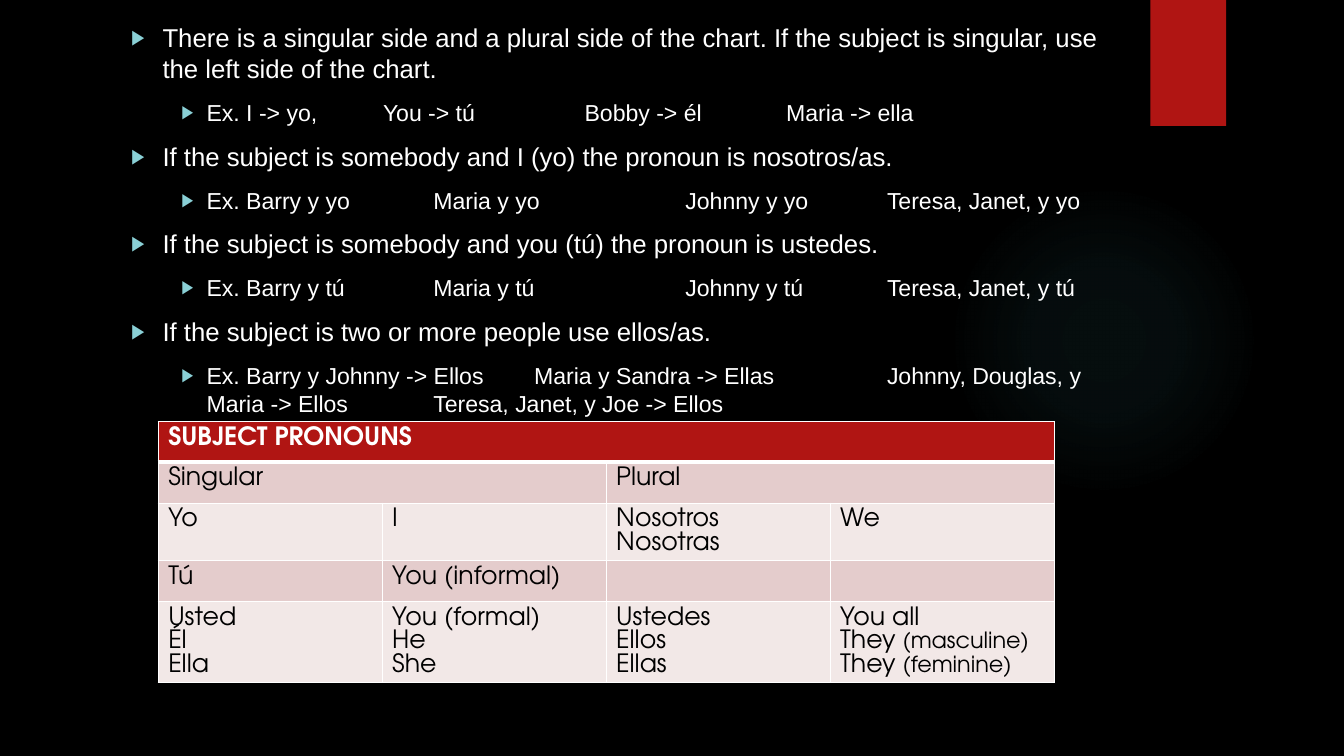
"""Build the slide on choosing Spanish subject pronouns."""
from dataclasses import dataclass

from lxml import etree
from pptx import Presentation
from pptx.dml.color import RGBColor
from pptx.enum import shapes, text
from pptx.oxml import parse_xml
from pptx.oxml import ns
from pptx.util import Pt

RULES = [
    ("There is a singular side and a plural side of the chart. If the subject is singular, "
     "use the left side of the chart.",
     "Ex. I -> yo,\t\tYou -> tú\t\t\tBobby -> él  \t\tMaria -> ella"),
    ("If the subject is somebody and I (yo) the pronoun is nosotros/as.",
     "Ex. Barry y yo\t\tMaria y yo\t\t\tJohnny y yo\t\tTeresa, Janet, y yo"),
    ("If the subject is somebody and you (tú) the pronoun is ustedes.",
     "Ex. Barry y tú \t\tMaria y tú \t\t\tJohnny y tú \t\tTeresa, Janet, y tú"),
    ("If the subject is two or more people use ellos/as.",
     "Ex. Barry y Johnny -> Ellos\t\tMaria y Sandra -> Ellas\t\t\tJohnny, Douglas, y "
     "Maria -> Ellos\t\tTeresa, Janet, y Joe -> Ellos"),
]
PRONOUNS = [
    [["SUBJECT PRONOUNS"], [], [], []],
    [["Singular"], [], ["Plural"], []],
    [["Yo"], ["I"], ["Nosotros", "Nosotras"], ["We"]],
    [["Tú"], ["You (informal)"], [], []],
    [["Usted", "Él", "Ella"], ["You (formal)", "He", "She"], ["Ustedes", "Ellos", "Ellas"],
     ["You all", ("They ", "(masculine)"), ("They ", "(feminine)")]],
]
MERGES = [((0, 0), (0, 3)), ((1, 0), (1, 1)), ((1, 2), (1, 3))]
ROW_HEIGHTS = [29.2, 29.2, 41, 29.2, 58]
COLUMN_WIDTH = 160


@dataclass(frozen=True)
class Theme:
    """Colours, fonts and type sizes."""
    back: str = "000000"
    white: str = "FFFFFF"
    red: str = "B01513"
    glow: str = "50B9C1"
    bullet: str = "8AD0D6"
    dark_band: str = "E4CCCC"
    light_band: str = "F2E8E7"
    rule_font: str = "Arial"
    table_font: str = "TeX Gyre Adventor"
    rule_size: float = 18.4
    example_size: float = 16.5
    table_size: float = 18
    note_size: float = 16


THEME = Theme()


def paint(fill, colour):
    """Fill with one solid colour."""
    fill.solid()
    fill.fore_color.rgb = RGBColor.from_string(colour)


def write(paragraph, words, font, size, colour, bold=False):
    """Add one formatted run."""
    run = paragraph.add_run()
    run.text = words
    run.font.name, run.font.size, run.font.bold = font, Pt(size), bold
    run.font.color.rgb = RGBColor.from_string(colour)


def add_plain(slide, kind, left, top, width, height):
    """Add a preset shape without line or shadow."""
    shape = slide.shapes.add_shape(kind, Pt(left), Pt(top), Pt(width), Pt(height))
    shape.shadow.inherit = False
    shape.line.fill.background()
    return shape


def add_glow(slide):
    """Add the faint round glow."""
    glow = add_plain(slide, shapes.MSO_SHAPE.OVAL, 677.5, 131.8, 221.8, 221.8)
    stops = "".join(
        f'<a:gs pos="{place * 1000}"><a:srgbClr val="{THEME.glow}">'
        f'<a:alpha val="{alpha * 1000}"/></a:srgbClr></a:gs>'
        for place, alpha in [(0, 7), (36, 6), (69, 0)])
    gradient = parse_xml(
        f'<a:gradFill {ns.nsdecls("a")}><a:gsLst>{stops}</a:gsLst><a:path path="circle">'
        '<a:fillToRect l="50000" t="50000" r="50000" b="50000"/></a:path></a:gradFill>')
    glow.fill.background()
    properties = glow.element.spPr
    properties.replace(properties.find(ns.qn("a:noFill")), gradient)


def add_bullet(paragraph, indent, hanging):
    """Give a paragraph its triangle, indents and tab distance."""
    properties = paragraph._p.get_or_add_pPr()
    properties.set("marL", str(Pt(indent)))
    properties.set("indent", str(-Pt(hanging)))
    properties.set("defTabSz", str(Pt(36)))
    colour = etree.SubElement(properties, ns.qn("a:buClr"))
    etree.SubElement(colour, ns.qn("a:srgbClr"), val=THEME.bullet)
    etree.SubElement(properties, ns.qn("a:buSzPct"), val="80000")
    etree.SubElement(properties, ns.qn("a:buFont"), typeface=THEME.rule_font)
    etree.SubElement(properties, ns.qn("a:buChar"), char="▶")


def add_rules(body):
    """Write the rules and their examples into the body placeholder."""
    body.left, body.top, body.width, body.height = Pt(50.4), Pt(12), Pt(765.4), Pt(330.5)
    frame = body.text_frame
    frame.word_wrap = True
    frame.auto_size = text.MSO_AUTO_SIZE.NONE
    frame.vertical_anchor = text.MSO_ANCHOR.TOP
    levels = [(58.5, 22.5, THEME.rule_size), (90, 18, THEME.example_size)]
    lines = [(level, words) for pair in RULES for level, words in enumerate(pair)]
    for number, (level, words) in enumerate(lines):
        paragraph = frame.add_paragraph() if number else frame.paragraphs[0]
        indent, hanging, size = levels[level]
        paragraph.level = level
        add_bullet(paragraph, indent, hanging)
        paragraph.space_before = Pt(10.4 if number else 0)
        paragraph.line_spacing = 1.0
        write(paragraph, words, THEME.rule_font, size, THEME.white)


def add_borders(cell, header):
    """Draw white cell borders, heavier around the header's lower edge."""
    properties = cell._tc.get_or_add_tcPr()
    for place, side in enumerate(("lnL", "lnR", "lnT", "lnB")):
        width = 3 if header and side == "lnB" else 1
        properties.insert(place, parse_xml(
            f'<a:{side} {ns.nsdecls("a")} w="{Pt(width)}"><a:solidFill>'
            f'<a:srgbClr val="{THEME.white}"/></a:solidFill></a:{side}>'))


def add_pronouns(slide):
    """Add the pronoun table."""
    columns = len(PRONOUNS[0])
    table = slide.shapes.add_table(
        len(PRONOUNS), columns, Pt(113), Pt(301), Pt(COLUMN_WIDTH * columns),
        Pt(sum(ROW_HEIGHTS))).table
    for column in table.columns:
        column.width = Pt(COLUMN_WIDTH)
    for start, end in MERGES:
        table.cell(*start).merge(table.cell(*end))
    for row, (height, cells) in enumerate(zip(ROW_HEIGHTS, PRONOUNS)):
        table.rows[row].height = Pt(height)
        header = row == 0
        band = THEME.red if header else THEME.dark_band if row % 2 else THEME.light_band
        ink = THEME.white if header else THEME.back
        for column, lines in enumerate(cells):
            cell = table.cell(row, column)
            paint(cell.fill, band)
            add_borders(cell, header)
            cell.text_frame.paragraphs[0].font.size = Pt(THEME.table_size)
            for number, line in enumerate(lines):
                frame = cell.text_frame
                paragraph = frame.add_paragraph() if number else frame.paragraphs[0]
                parts = (line,) if isinstance(line, str) else line
                for words, size in zip(parts, (THEME.table_size, THEME.note_size)):
                    write(paragraph, words, THEME.table_font, size, ink, header)


def main():
    """Build and save the slide."""
    deck = Presentation()
    deck.slide_width, deck.slide_height = Pt(960), Pt(540)
    slide = deck.slides.add_slide(deck.slide_layouts.get_by_name("Title and Content"))
    paint(slide.background.fill, THEME.back)
    heading = slide.shapes.title.element
    heading.getparent().remove(heading)
    rules = slide.placeholders[1]
    add_glow(slide)
    ribbon = add_plain(slide, shapes.MSO_SHAPE.RECTANGLE, 821.8, 0, 54, 90)
    paint(ribbon.fill, THEME.red)
    rules.element.getparent().append(rules.element)
    add_rules(rules)
    add_pronouns(slide)
    deck.save("out.pptx")


if __name__ == "__main__":
    main()
